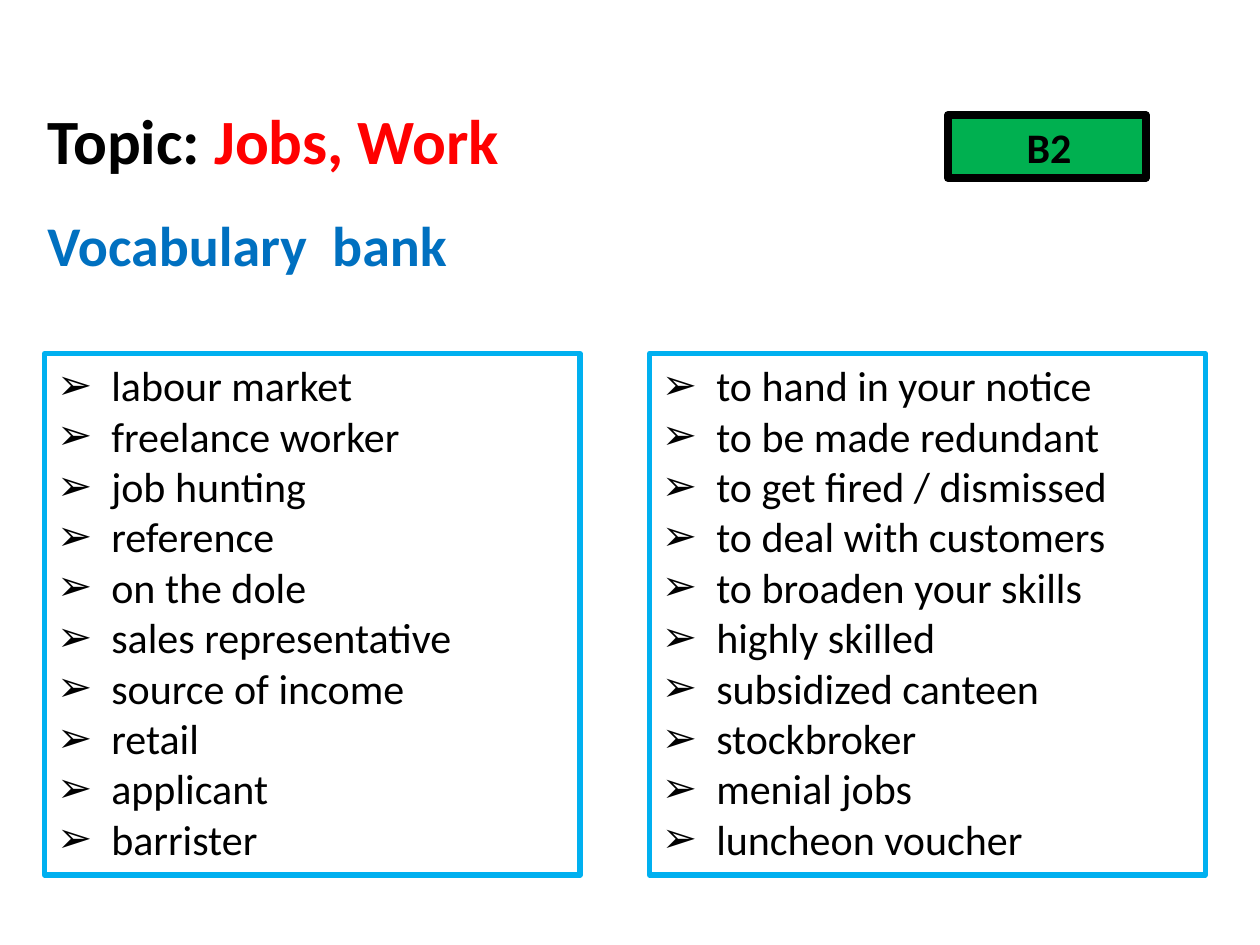
from pptx import Presentation
from pptx.dml.color import RGBColor
from pptx.enum.shapes import MSO_SHAPE as Shape
from pptx.enum.text import MSO_ANCHOR as Anchor, MSO_AUTO_SIZE as AutoSize, PP_ALIGN as Align
from pptx.oxml.ns import qn
from pptx.util import Pt
from lxml import etree

COLORS = {
    "black": "000000",
    "red": "FF0000",
    "blue": "0070C0",
    "sky": "00B0F0",
    "green": "00B050",
}
BULLET_INDENT = Pt(31)


def add_text(para, text, size=24, color="black", bold=False, bullet=None):
    if bullet:
        properties = para._p.get_or_add_pPr()
        properties.set("marL", str(BULLET_INDENT))
        properties.set("indent", str(-BULLET_INDENT))
        etree.SubElement(properties, qn("a:buFont"), typeface="Calibri")
        etree.SubElement(properties, qn("a:buChar"), char=bullet)
    span = para.add_run()
    span.text = text
    span.font.name = "Calibri"
    span.font.size = Pt(size)
    span.font.bold = bold
    span.font.color.rgb = RGBColor.from_string(COLORS[color])


def add_frame(page, left, top, width, height, line, weight, fill=None):
    box = page.shapes.add_shape(Shape.RECTANGLE, Pt(left), Pt(top), Pt(width), Pt(height))
    box.shadow.inherit = False
    if fill:
        box.fill.solid()
        box.fill.fore_color.rgb = RGBColor.from_string(COLORS[fill])
    else:
        box.fill.background()
    box.line.color.rgb = RGBColor.from_string(COLORS[line])
    box.line.width = Pt(weight)
    box.text_frame.word_wrap = True
    box.text_frame.auto_size = AutoSize.SHAPE_TO_FIT_TEXT
    return box


deck = Presentation()
deck.slide_width, deck.slide_height = Pt(720), Pt(540)
page = deck.slides.add_slide(deck.slide_layouts[6])

# Headings
headings = [
    (54.7, 334.8, 51, 36, [("Topic: ", "black"), ("Jobs, Work", "red")]),
    (116.6, 289.4, 46, 32, [("Vocabulary  bank", "blue")]),
]
for top, width, height, size, parts in headings:
    box = page.shapes.add_textbox(Pt(20), Pt(top), Pt(width), Pt(height))
    box.text_frame.word_wrap = True
    box.text_frame.auto_size = AutoSize.SHAPE_TO_FIT_TEXT
    for text, color in parts:
        add_text(box.text_frame.paragraphs[0], text, size=size, color=color, bold=True)

# Word lists
word_lists = [
    (25.5, 306, [
        "labour market", "freelance worker", "job hunting", "reference", "on the dole",
        "sales representative", "source of income", "retail", "applicant", "barrister",
    ]),
    (371.2, 317.5, [
        "to hand in your notice", "to be made redundant", "to get fired / dismissed",
        "to deal with customers", "to broaden your skills", "highly skilled",
        "subsidized canteen", "stockbroker", "menial jobs", "luncheon voucher",
    ]),
]
for left, width, words in word_lists:
    box = add_frame(page, left, 202, width, 298, line="sky", weight=3)
    frame = box.text_frame
    frame.vertical_anchor = Anchor.TOP
    for index, word in enumerate(words):
        para = frame.paragraphs[0] if index == 0 else frame.add_paragraph()
        para.alignment = Align.LEFT
        add_text(para, word, bullet="➢")

# Level badge
badge = add_frame(page, 541.7, 65.8, 113, 36, line="black", weight=4.5, fill="green")
badge.text_frame.vertical_anchor = Anchor.MIDDLE
badge.text_frame.margin_left = Pt(9.6)
badge.text_frame.paragraphs[0].alignment = Align.CENTER
add_text(badge.text_frame.paragraphs[0], "B2", bold=True)

deck.save("out.pptx")
